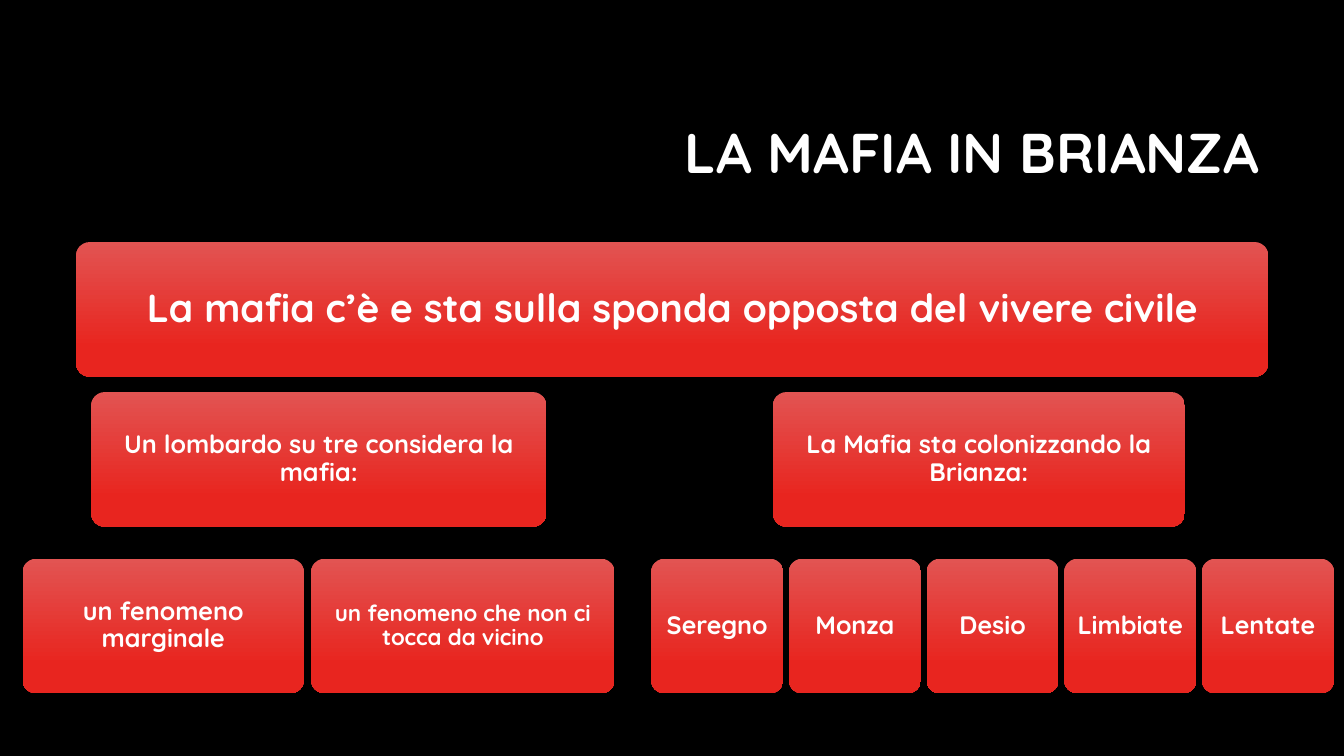
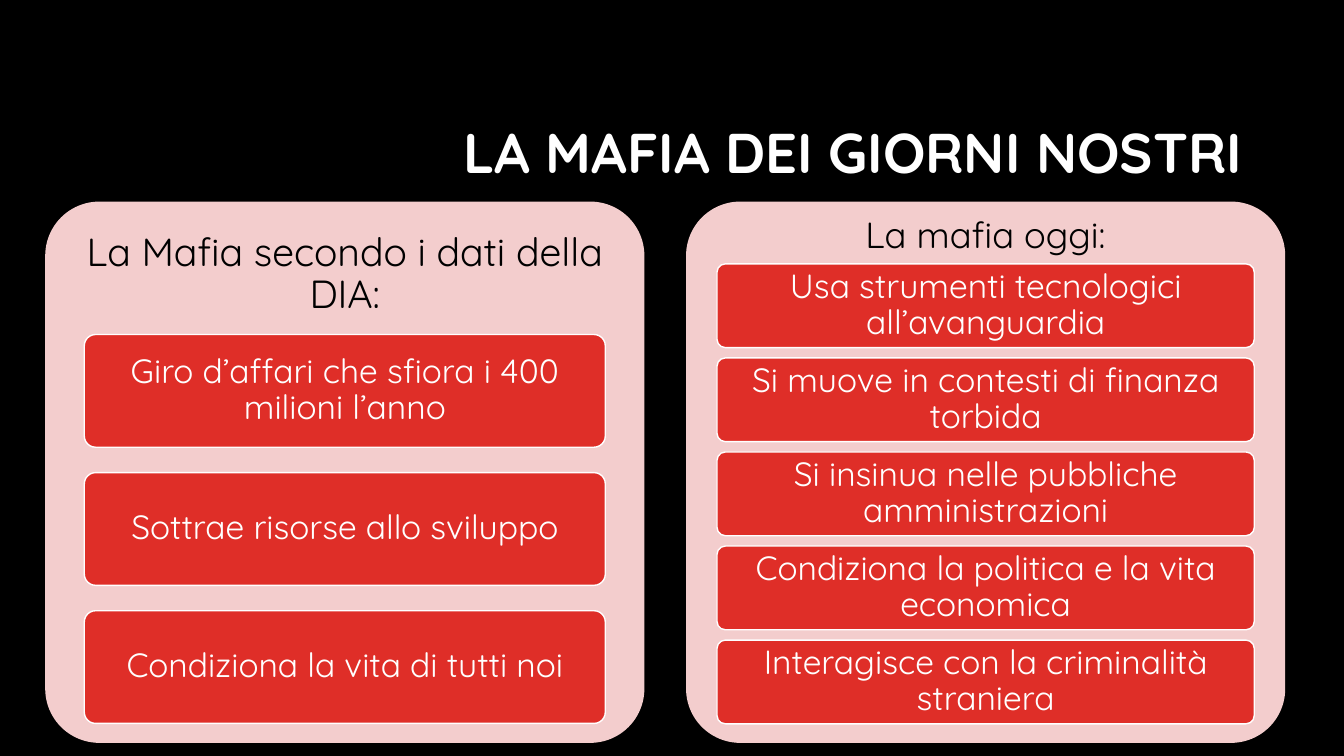
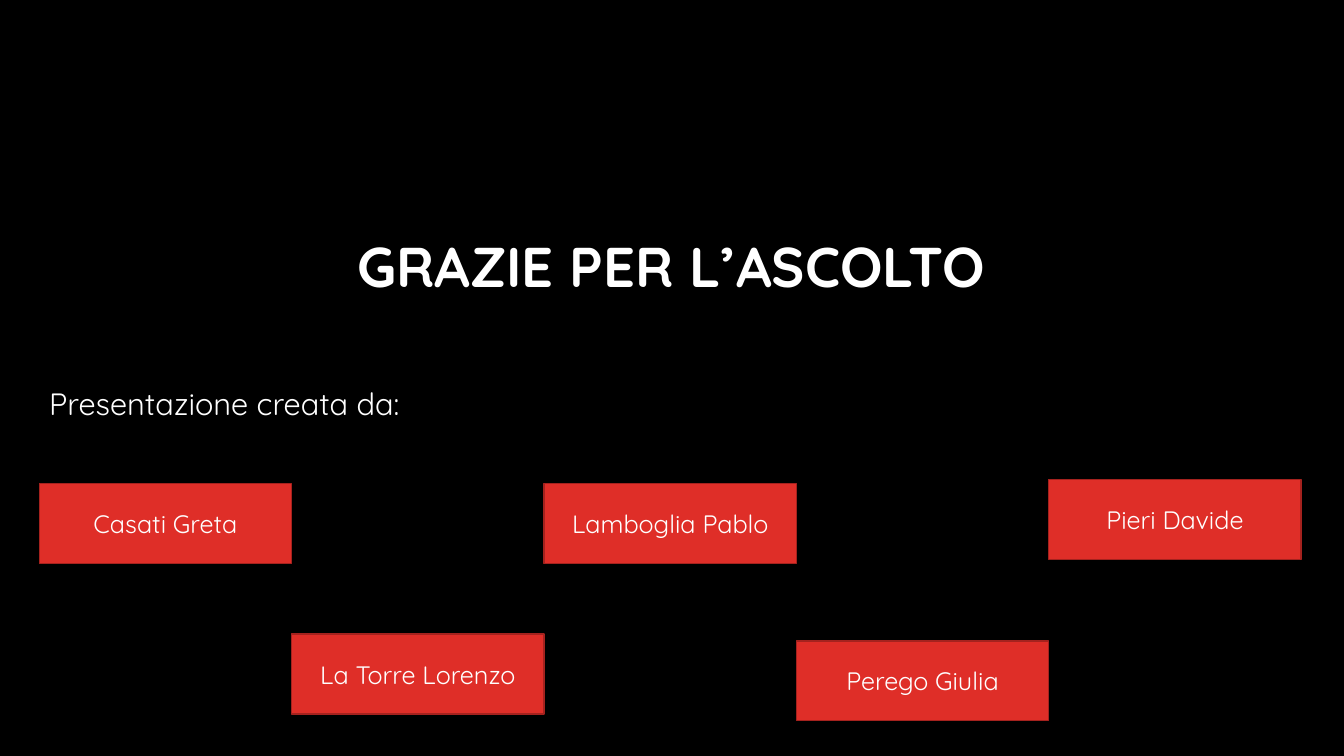
"""Build three slides on the mafia in Brianza."""
from pptx import Presentation
from pptx import util as u
from pptx.dml import color
from pptx.enum import shapes, text

FONT = "Quicksand"
COLORS = {
    "background": "000000",
    "white": "FFFFFF",
    "black": "000000",
    "red": "DF2E28",
    "dark_red": "A5221E",
    "pink": "F3CDCD",
    "gradient_top": "E25452",
    "gradient_bottom": "E8251F",
}


def rgb(name):
    """Return the named colour."""
    return color.RGBColor.from_string(COLORS[name])


def write(sp, words, size, ink="white", bold=False, align="CENTER", anchor="MIDDLE", spacing=0.9):
    """Put one formatted paragraph into a shape."""
    tf = sp.text_frame
    tf.word_wrap = True
    tf.auto_size = text.MSO_AUTO_SIZE.NONE
    tf.vertical_anchor = text.MSO_ANCHOR[anchor]
    tf.text = words
    p = tf.paragraphs[0]
    p.alignment = text.PP_ALIGN[align]
    p.line_spacing = spacing
    p.font.name = FONT
    p.font.size = u.Pt(size)
    p.font.bold = bold
    p.font.color.rgb = rgb(ink)


def place(sp, left, top, width, height):
    """Position a shape, with lengths in centimetres."""
    sp.left, sp.top, sp.width, sp.height = map(u.Cm, (left, top, width, height))


def add_slide(prs, title, box, align="RIGHT"):
    """Add a title-only slide with a formatted title."""
    s = prs.slides.add_slide(prs.slide_layouts[5])
    place(s.shapes.title, *box)
    write(s.shapes.title, title, 40, bold=True, align=align)
    return s


def add_box(s, box, fill="red", line=None, rounded=True):
    """Add a rectangle with a plain fill and an optional outline."""
    kind = shapes.MSO_SHAPE.ROUNDED_RECTANGLE if rounded else shapes.MSO_SHAPE.RECTANGLE
    sp = s.shapes.add_shape(kind, *map(u.Cm, box))
    sp.shadow.inherit = False
    sp.fill.solid()
    sp.fill.fore_color.rgb = rgb(fill)
    if line:
        sp.line.color.rgb = rgb(line)
        sp.line.width = u.Pt(1)
    else:
        sp.line.fill.background()
    if rounded:
        sp.adjustments[0] = 0.1
    tf = sp.text_frame
    tf.margin_left = tf.margin_right = u.Cm(0.15)
    tf.margin_top = tf.margin_bottom = 0
    return sp


def add_tree_node(s, words, left, top, width, size=18):
    """Add a node of the tree with a vertical red gradient."""
    sp = add_box(s, (left, top, width, 3.39))
    sp.fill.gradient()
    sp.fill.gradient_angle = 270
    stops = zip(sp.fill.gradient_stops, (0, 0.78), ("gradient_top", "gradient_bottom"))
    for stop, position, name in stops:
        stop.position = position
        stop.color.rgb = rgb(name)
    write(sp, words, size, bold=True)


def add_panel(s, left, heading, size, heading_gap, items, first, pitch, width, height):
    """Add a pink panel with a heading and a column of red boxes."""
    panel_width = 15.1
    panel = add_box(s, (left, 5.08, panel_width, 13.64), "pink")
    panel.text_frame.margin_top = u.Cm(heading_gap)
    write(panel, heading, size, "black", anchor="TOP")
    item_left = left + (panel_width - width) / 2
    for i, item in enumerate(items):
        sp = add_box(s, (item_left, first + i * pitch, width, height), line="white")
        write(sp, item, 24)


def brianza_slide(prs):
    """Show the tree of facts about Brianza."""
    s = add_slide(prs, "LA MAFIA IN BRIANZA", (8.05, 2.13, 23.93, 3.58))
    top, middle, bottom = 6.1, 9.88, 14.08
    add_tree_node(s, "La mafia c’è e sta sulla sponda opposta del vivere civile", 1.92, top, 30.04, 28)
    add_tree_node(s, "Un lombardo su tre considera la mafia:", 2.3, middle, 11.47)
    add_tree_node(s, "La Mafia sta colonizzando la Brianza:", 19.48, middle, 10.38)
    add_tree_node(s, "un fenomeno marginale", 0.57, bottom, 7.09)
    add_tree_node(s, "un fenomeno che non ci tocca da vicino", 7.84, bottom, 7.65, 16)
    for i, town in enumerate(("Seregno", "Monza", "Desio", "Limbiate", "Lentate")):
        add_tree_node(s, town, 16.41 + i * 3.47, bottom, 3.33)


def today_slide(prs):
    """Show the two panels on the mafia today."""
    s = add_slide(prs, "LA MAFIA DEI GIORNI NOSTRI", (4.09, 2.13, 27.46, 3.58))
    add_panel(s, 1.14, "La Mafia secondo i dati della DIA:", 28, 0.38, (
        "Giro d’affari che sfiora i 400 milioni l’anno",
        "Sottrae risorse allo sviluppo",
        "Condiziona la vita di tutti noi",
    ), 8.43, 3.48, 13.13, 2.84)
    add_panel(s, 17.29, "La mafia oggi:", 26, 0, (
        "Usa strumenti tecnologici all’avanguardia",
        "Si muove in contesti di finanza torbida",
        "Si insinua nelle pubbliche amministrazioni",
        "Condiziona la politica e la vita economica",
        "Interagisce con la criminalità straniera",
    ), 6.65, 2.37, 13.54, 2.11)


def thanks_slide(prs):
    """Show the closing words and the authors."""
    s = add_slide(prs, "GRAZIE PER L’ASCOLTO", (4.95, 5, 23.93, 3.58), "CENTER")
    intro = s.shapes.add_textbox(*map(u.Cm, (0.99, 9.68, 11.35, 1.45)))
    write(intro, "Presentazione creata da:", 22, align="LEFT", anchor="TOP")
    authors = (
        ("Casati Greta", 12.19),
        ("La Torre Lorenzo", 15.98),
        ("Lamboglia Pablo", 12.19),
        ("Perego Giulia", 16.15),
        ("Pieri Davide", 12.09),
    )
    width = 6.36
    for i, (author, top) in enumerate(authors):
        sp = add_box(s, (0.99 + i * width, top, width, 2.01), line="dark_red", rounded=False)
        write(sp, author, 18, spacing=1.0)


def main():
    """Build and save the presentation."""
    prs = Presentation()
    prs.slide_width, prs.slide_height = u.Cm(33.87), u.Cm(19.05)
    fill = prs.slide_master.background.fill
    fill.solid()
    fill.fore_color.rgb = rgb("background")
    brianza_slide(prs)
    today_slide(prs)
    thanks_slide(prs)
    prs.save("out.pptx")


if __name__ == "__main__":
    main()
